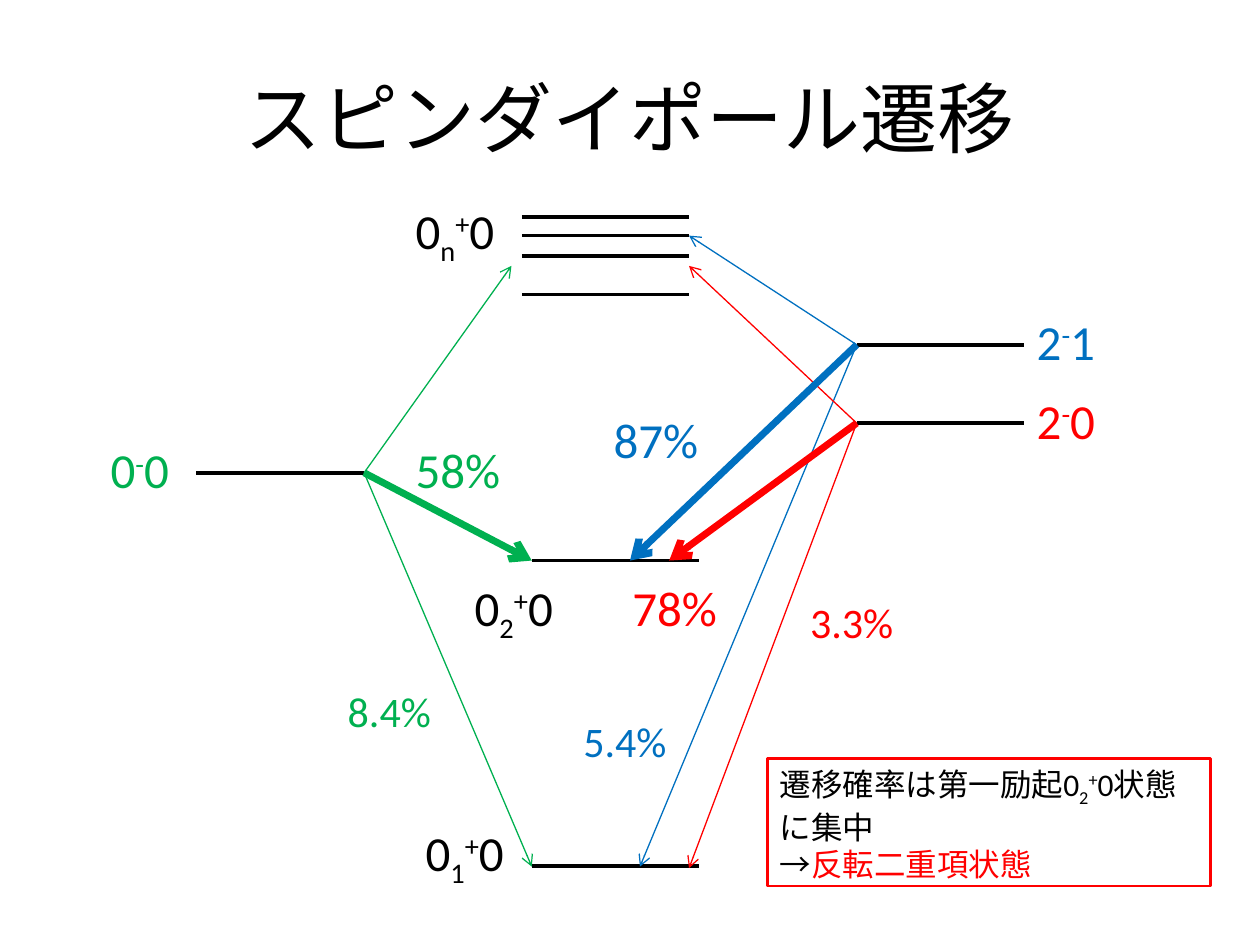
from lxml import etree
from pptx import Presentation
from pptx.dml.color import RGBColor
from pptx.enum import shapes, text
from pptx.oxml.ns import qn
from pptx.util import Cm, Pt

INK = {"black": "000000", "green": "00B050", "blue": "0070C0", "red": "FF0000"}
BASE = {"_": "-25000", "^": "30000"}
TITLE = "スピンダイポール遷移"

# Energy levels: left end, height (cm)
WIDE = 3.38
LEVELS = [(10.72, 17.46), (10.72, 11.3), (17.27, 8.53), (3.96, 9.53),
          (17.27, 6.95)] + [(10.52, y) for y in (4.37, 4.75, 5.16, 5.94)]

# Transitions: start of each colour, then its ends (ground, upper, second)
START = {"green": (7.34, 9.53), "red": (17.27, 8.53), "blue": (17.27, 6.95)}
ENDS = {"green": [(10.72, 17.47), (10.31, 5.36), (10.72, 11.3)],
        "red": [(13.89, 17.5), (13.89, 5.36), (13.49, 11.3)],
        "blue": [(12.9, 17.47), (13.89, 4.75), (12.7, 11.3)]}
WIDTHS = [0.75, 0.75, 4]

# Labels by (size, width, height): text, left, top, colour
# _ lowers and ^ raises the next letter
LABELS = {
    (28, 2.18, 1.45): [
        ("0^-0", 1.98, 8.74, "green"), ("2^-0", 20.65, 7.75, "red"),
        ("2^-1", 20.65, 6.15, "blue"), ("0_1^+0", 8.33, 16.46, "black"),
        ("0_2^+0", 9.32, 11.51, "black")],
    (28, 2.39, 1.45): [
        ("58%", 8.13, 8.74, "green"), ("87%", 12.12, 8.13, "blue"),
        ("78%", 12.5, 11.51, "red"), ("0_n^+0", 8.13, 3.91, "black")],
    (24, 2.18, 1.27): [
        ("8.4%", 6.76, 13.69, "green"), ("3.3%", 16.08, 11.91, "red"),
        ("5.4%", 11.51, 14.3, "blue")],
}
NOTE = [[("遷移確率は第一励起0_2^+0状態に集中", "black")],
        [("→", "black"), ("反転二重項状態", "red")]]


def rgb(name):
    return RGBColor.from_string(INK[name])


def line(slide, start, end, ink, width, head=False):
    ends = [Cm(v) for v in start + end]
    wire = slide.shapes.add_connector(shapes.MSO_CONNECTOR.STRAIGHT, *ends)
    wire.line.color.rgb = rgb(ink)
    wire.line.width = Pt(width)
    if head:
        etree.SubElement(wire.line._get_or_add_ln(), qn("a:tailEnd"), type="arrow")
    etree.SubElement(wire._element.spPr, qn("a:effectLst"))


def split(mark):
    """Cut marked text into (text, baseline) parts."""
    parts, plain, chars = [], "", iter(mark)
    for char in chars:
        if char in BASE:
            parts += [(plain, None), (next(chars), BASE[char])]
            plain = ""
        else:
            plain += char
    return [part for part in parts + [(plain, None)] if part[0]]


def write(para, mark, ink, size):
    para.alignment = text.PP_ALIGN.LEFT
    for part, base in split(mark):
        run = para.add_run()
        run.text = part
        run.font.name = "Calibri"
        run.font.size = Pt(size)
        run.font.color.rgb = rgb(ink)
        if base:
            run._r.get_or_add_rPr().set("baseline", base)


def fit(frame, wrap):
    frame.word_wrap = wrap
    frame.auto_size = text.MSO_AUTO_SIZE.SHAPE_TO_FIT_TEXT
    frame.vertical_anchor = text.MSO_ANCHOR.TOP


def main():
    deck = Presentation()
    deck.slide_width, deck.slide_height = Cm(25.4), Cm(19.05)
    slide = deck.slides.add_slide(deck.slide_layouts[5])

    # Title
    title = slide.shapes.title
    title.left, title.top, title.width, title.height = map(Cm, (1.27, 0.76, 22.86, 3.18))
    title.text_frame.text = TITLE
    font = title.text_frame.paragraphs[0].runs[0].font
    font.name, font.size = "Calibri", Pt(44)
    font.color.rgb = rgb("black")

    # Levels and transitions
    for x, y in LEVELS:
        line(slide, (x, y), (x + WIDE, y), "black", 2)
    for step, width in enumerate(WIDTHS):
        for ink, start in START.items():
            line(slide, start, ENDS[ink][step], ink, width, head=True)

    # Labels
    for (size, wide, high), group in LABELS.items():
        for mark, x, y, ink in group:
            box = slide.shapes.add_textbox(Cm(x), Cm(y), Cm(wide), Cm(high))
            fit(box.text_frame, wrap=True)
            write(box.text_frame.paragraphs[0], mark, ink, size)

    # Framed conclusion
    note = slide.shapes.add_shape(shapes.MSO_SHAPE.RECTANGLE,
                                  Cm(15.47), Cm(15.29), Cm(8.94), Cm(2.57))
    note.shadow.inherit = False
    note.fill.background()
    note.line.color.rgb = rgb("red")
    note.line.width = Pt(1.5)
    frame = note.text_frame
    fit(frame, wrap=True)
    for row, parts in enumerate(NOTE):
        para = frame.add_paragraph() if row else frame.paragraphs[0]
        for mark, ink in parts:
            write(para, mark, ink, 18)

    deck.save("out.pptx")


if __name__ == "__main__":
    main()
